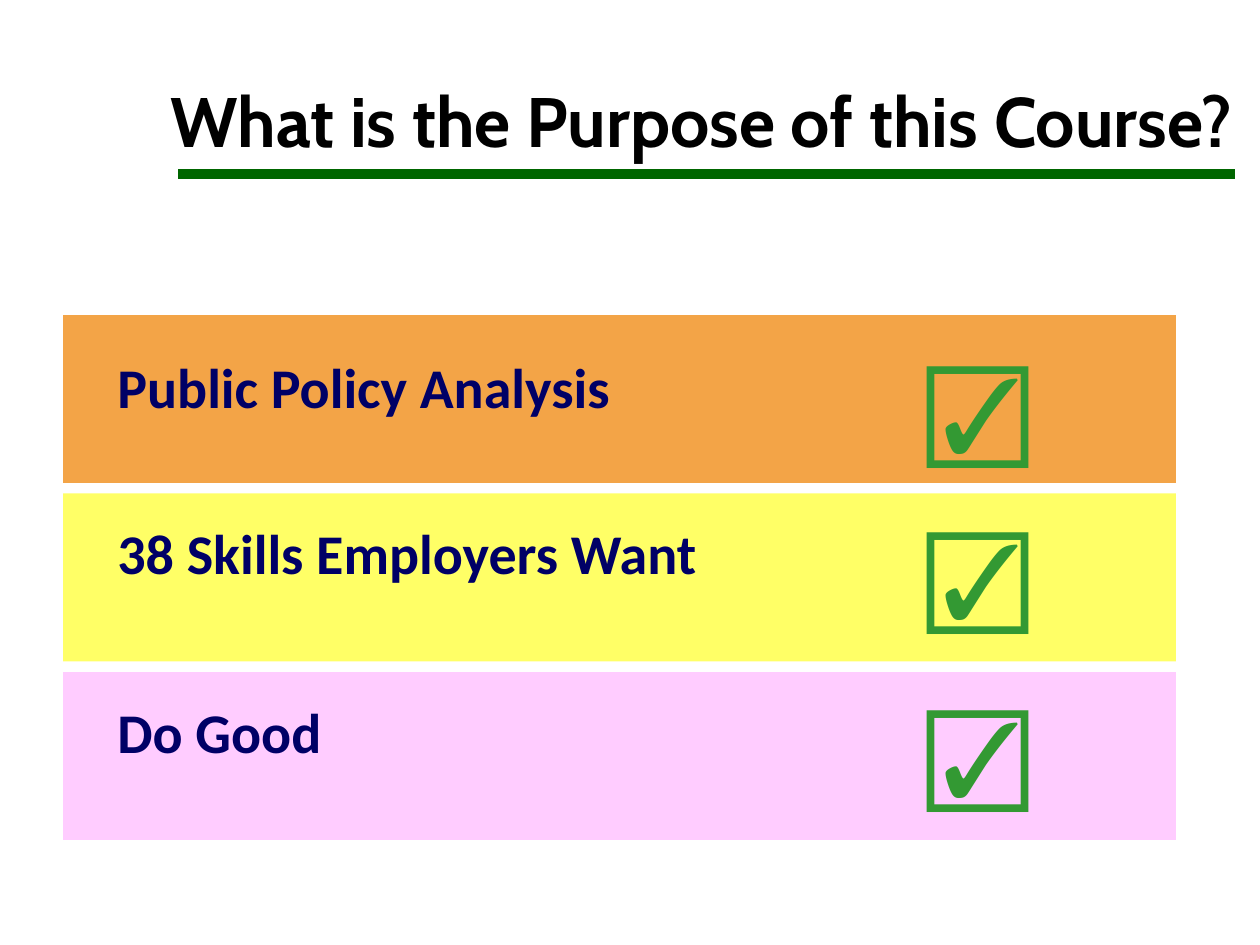
from lxml import etree
from pptx import Presentation
from pptx.dml.color import RGBColor
from pptx.enum import shapes, text
from pptx.oxml import ns
from pptx.util import Pt


def tint(code):
    """Turn a hex string into a colour."""
    return RGBColor.from_string(code)


def place(item, box):
    """Move and size an item to a box in points."""
    item.left, item.top, item.width, item.height = map(Pt, box)


def write(item, words, font, size, color, bold=True, anchor="TOP", lead=1.0):
    """Put one formatted paragraph into an item."""
    frame = item.text_frame
    frame.word_wrap = True
    frame.auto_size = text.MSO_AUTO_SIZE.NONE
    frame.vertical_anchor = text.MSO_ANCHOR[anchor]
    para = frame.paragraphs[0]
    para.alignment = text.PP_ALIGN.LEFT
    para.line_spacing = lead
    run = para.add_run()
    run.text = words
    run.font.name, run.font.size, run.font.bold = font, Pt(size), bold
    run.font.color.rgb = tint(color)


def head(slide, box, words):
    """Place the title and the green rule below it."""
    x, y, w, h = box
    place(slide.shapes.title, box)
    write(slide.shapes.title, words, "Cabin", 40, "000000", anchor="BOTTOM", lead=0.9)
    rule = slide.shapes.add_connector(
        shapes.MSO_CONNECTOR.STRAIGHT,
        Pt(x + 12), Pt(y + h + 3), Pt(705.6), Pt(y + h + 3))
    rule.line.color.rgb = tint("006600")
    rule.line.width = Pt(6)
    etree.SubElement(rule._element.spPr, ns.qn("a:effectLst"))


def band(slide, box, words, fill, drop):
    """Place a coloured band with its label and tick, the label at a given drop."""
    x, y, w, h = box
    bar = slide.shapes.add_shape(shapes.MSO_SHAPE.RECTANGLE, *map(Pt, box))
    bar.shadow.inherit = False
    bar.fill.solid()
    bar.fill.fore_color.rgb = tint(fill)
    bar.line.fill.background()
    label = slide.shapes.add_textbox(Pt(x + 24), Pt(y + drop), Pt(396), Pt(45))
    write(label, words, "Calibri", 32, "000066")
    tick = slide.shapes.add_textbox(Pt(x + 486), Pt(y + drop - 6), Pt(78), Pt(79))
    write(tick, "☑", "Arial", 60, "339933", bold=False)


def main():
    """Build the slide and save it."""
    deck = Presentation()
    deck.slide_width, deck.slide_height = Pt(720), Pt(540)
    slide = deck.slides.add_slide(deck.slide_layouts[5])
    head(slide, (90, 6.5, 676.8, 90), "What is the Purpose of this Course?")
    rows = [("Public Policy Analysis", "F3A447", 18),
            ("38 Skills Employers Want", "FFFF66", 11),
            ("Do Good", "FFCCFF", 11)]
    for i, row in enumerate(rows):
        band(slide, (36, 180 + 102 * i, 636, 96), *row)
    deck.save("out.pptx")


if __name__ == "__main__":
    main()
